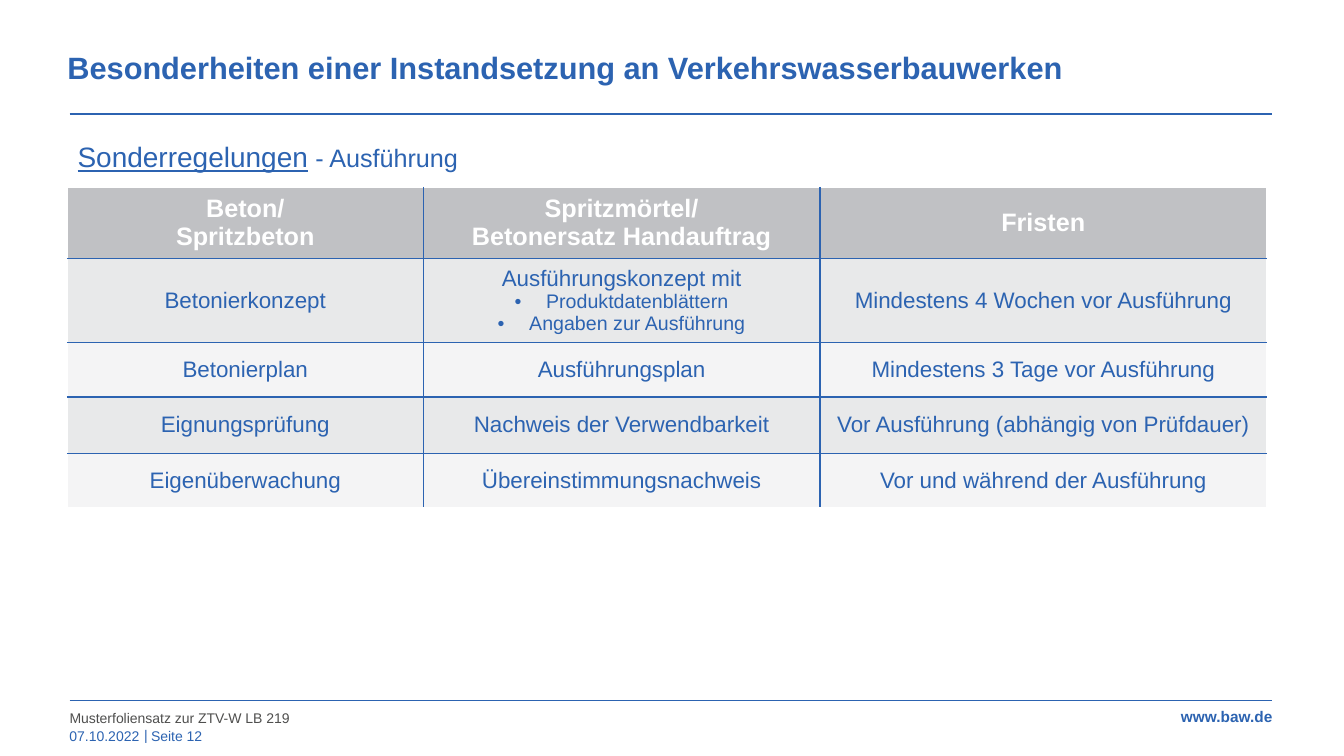
from lxml import etree
from pptx import Presentation
from pptx.dml.color import RGBColor
from pptx.enum import shapes, text
from pptx.oxml import ns
from pptx.util import Pt

BLUE = RGBColor(0x2C, 0x63, 0xB1)
DARK_GRAY = RGBColor(0x4F, 0x4F, 0x4E)
WHITE = RGBColor(0xFF, 0xFF, 0xFF)
HEADER_GRAY = RGBColor(0xC0, 0xC1, 0xC4)
BANDS = (RGBColor(0xE8, 0xE9, 0xEA), RGBColor(0xF4, 0xF4, 0xF5))

LEFT, RIGHT = 49.7, 909.4
CONTENT_LEFT, CONTENT_WIDTH = 48.2, 860.4


class SlideBuilder:
    font = "Arial"

    def __init__(self, slide):
        self.slide = slide

    def run(self, paragraph, content, size, color=BLUE, bold=False, underline=False):
        run = paragraph.add_run()
        run.text = content
        font = run.font
        font.name, font.size, font.bold = self.font, Pt(size), bold
        font.underline = underline
        font.color.rgb = color

    def frame(self, shape, box, anchor, inset=None):
        shape.left, shape.top, shape.width, shape.height = map(Pt, box)
        frame = shape.text_frame
        frame.auto_size = text.MSO_AUTO_SIZE.NONE
        frame.word_wrap = True
        frame.vertical_anchor = anchor
        if inset is not None:
            frame.margin_left = frame.margin_right = Pt(inset)
            frame.margin_top = frame.margin_bottom = Pt(inset)
        return frame

    def placeholder(self, index, box, spacing, runs, inset=None):
        frame = self.frame(self.slide.placeholders[index], box, text.MSO_ANCHOR.TOP, inset)
        paragraph = frame.paragraphs[0]
        properties = paragraph._p.get_or_add_pPr()
        properties.set("marL", "0")
        properties.set("indent", "0")
        etree.SubElement(properties, ns.qn("a:buNone"))
        paragraph.alignment = text.PP_ALIGN.LEFT
        paragraph.line_spacing = spacing
        paragraph.space_before = Pt(0)
        for content, style in runs:
            self.run(paragraph, content, **style)

    def label(self, content, box, size=10, color=BLUE, bold=False, align=text.PP_ALIGN.LEFT):
        shape = self.slide.shapes.add_textbox(*map(Pt, box))
        paragraph = self.frame(shape, box, text.MSO_ANCHOR.MIDDLE, 0).paragraphs[0]
        paragraph.alignment = align
        self.run(paragraph, content, size, color, bold)

    def rule(self, y):
        line = self.slide.shapes.add_connector(
            shapes.MSO_CONNECTOR.STRAIGHT, Pt(LEFT), Pt(y), Pt(RIGHT), Pt(y))
        line.line.color.rgb = BLUE
        line.line.width = Pt(1)
        etree.SubElement(line._element.spPr, ns.qn("a:effectLst"))

    def borders(self, cell, outer_sides):
        properties = cell._tc.get_or_add_tcPr()
        for side, is_outer in outer_sides.items():
            edge = etree.SubElement(properties, ns.qn(f"a:ln{side}"), w=str(Pt(1)))
            fill = etree.SubElement(edge, ns.qn("a:solidFill"))
            color = WHITE if is_outer else BLUE
            etree.SubElement(fill, ns.qn("a:srgbClr"), val=str(color))

    def cell(self, cell, lines, fill, size, color, bold):
        cell.fill.solid()
        cell.fill.fore_color.rgb = fill
        cell.vertical_anchor = text.MSO_ANCHOR.MIDDLE
        frame = cell.text_frame
        for number, content in enumerate(lines):
            paragraph = frame.add_paragraph() if number else frame.paragraphs[0]
            is_bullet = content.startswith("•")
            if is_bullet:
                properties = paragraph._p.get_or_add_pPr()
                properties.set("marL", str(Pt(22.5)))
                properties.set("indent", str(Pt(-22.5)))
                etree.SubElement(properties, ns.qn("a:buFont"), typeface=self.font)
                etree.SubElement(properties, ns.qn("a:buChar"), char="•")
            paragraph.alignment = text.PP_ALIGN.CENTER
            self.run(paragraph, content.lstrip("•"), 14 if is_bullet else size, color, bold)

    def table(self, left, top, widths, heights, rows):
        table = self.slide.shapes.add_table(
            len(rows), len(widths), Pt(left), Pt(top),
            Pt(sum(widths)), Pt(sum(heights))).table
        table.horz_banding = False
        for column, width in zip(table.columns, widths):
            column.width = Pt(width)
        for r, (height, row) in enumerate(zip(heights, rows)):
            table.rows[r].height = Pt(height)
            for c, lines in enumerate(row):
                cell = table.cell(r, c)
                self.borders(cell, {"L": c == 0, "R": c == len(widths) - 1,
                                    "T": r == 0, "B": r == len(rows) - 1})
                if r == 0:
                    self.cell(cell, lines, HEADER_GRAY, 18, WHITE, True)
                else:
                    self.cell(cell, lines, BANDS[(r - 1) % 2], 16, BLUE, False)


def main():
    deck = Presentation()
    deck.slide_width, deck.slide_height = Pt(960.5), Pt(540)
    page = SlideBuilder(deck.slides.add_slide(deck.slide_layouts[1]))

    # Title and subtitle
    page.placeholder(0, (CONTENT_LEFT, 32.4, CONTENT_WIDTH, 33.8), 1.1, [
        ("Besonderheiten einer Instandsetzung an Verkehrswasserbauwerken",
         {"size": 22, "bold": True})], inset=0)
    page.placeholder(1, (CONTENT_LEFT, 84.2, CONTENT_WIDTH, 38.9), 1.5, [
        ("Sonderregelungen", {"size": 20, "underline": True}),
        (" - Ausführung", {"size": 18})])

    # Rules above and below the content
    for y in (81.4, 500.4):
        page.rule(y)

    # Table of special provisions
    provisions = [
        [["Beton/", "Spritzbeton"], ["Spritzmörtel/", "Betonersatz Handauftrag"], ["Fristen"]],
        [["Betonierkonzept"],
         ["Ausführungskonzept mit", "•Produktdatenblättern", "•Angaben zur Ausführung"],
         ["Mindestens 4 Wochen vor Ausführung"]],
        [["Betonierplan"], ["Ausführungsplan"], ["Mindestens 3 Tage vor Ausführung"]],
        [["Eignungsprüfung"], ["Nachweis der Verwendbarkeit"],
         ["Vor Ausführung (abhängig von Prüfdauer)"]],
        [["Eigenüberwachung"], ["Übereinstimmungsnachweis"],
         ["Vor und während der Ausführung"]],
    ]
    page.table(CONTENT_LEFT, 134, (254.2, 283.7, 319), (50.6, 60.2, 38.8, 40.2, 38.8),
               provisions)

    # Footer
    page.label("Musterfoliensatz zur ZTV-W LB 219", (LEFT, 507, 777, 11.5), color=DARK_GRAY)
    page.label("07.10.2022", (LEFT, 520, 52, 11.5))
    page.label("|", (103, 519.3, 4, 11.5))
    page.label("Seite 12", (108, 520, 51, 11.5))
    page.label("www.baw.de", (RIGHT - 70.6, 506.2, 70.6, 11.5), 11, bold=True,
               align=text.PP_ALIGN.RIGHT)

    deck.save("out.pptx")


if __name__ == "__main__":
    main()
